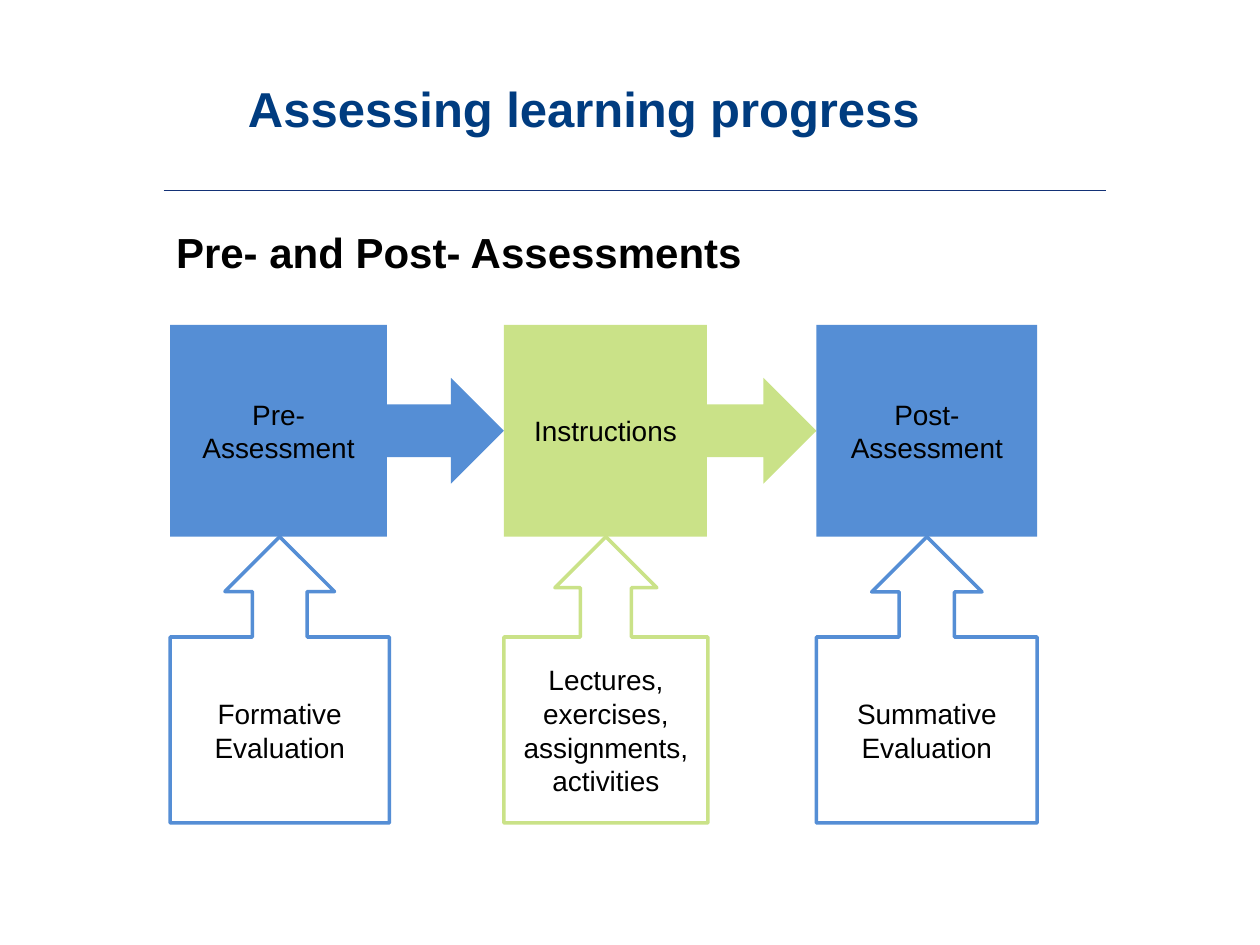
import pptx
import pptx.util
import pptx.dml.color
import pptx.enum.shapes
import pptx.enum.text
import pptx.oxml.ns
from lxml import etree
from pptx.util import Cm

TITLE = "Assessing learning progress"
HEADING = "Pre- and Post- Assessments"
STAGES = [
    dict(step="Pre- Assessment", support="Formative Evaluation", color="blue",
         shape="RIGHT_ARROW_CALLOUT", width=6.73, support_width=4.42),
    dict(step="Instructions", support="Lectures, exercises, assignments, activities", color="green",
         shape="RIGHT_ARROW_CALLOUT", width=6.3, support_width=4.11),
    dict(step="Post- Assessment", support="Summative Evaluation", color="blue",
         shape="RECTANGLE", width=4.45, support_width=4.45),
]
THEME = dict(font="Arial", title="003C80", rule="133176", text="000000", white="FFFFFF",
             blue="558ED5", green="CAE288", title_size=28, heading_size=24, body_size=16)
LEFT, STEP_TOP, STEP_HEIGHT, SUPPORT_HEIGHT = 3.43, 6.55, 4.27, 5.77


def rgb(name):
    return pptx.dml.color.RGBColor.from_string(THEME[name])


def write(s, text, size="body_size", color="text", bold=False, align="LEFT", anchor="MIDDLE"):
    tf = s.text_frame
    tf.word_wrap = True
    tf.vertical_anchor = getattr(pptx.enum.text.MSO_ANCHOR, anchor)
    p = tf.paragraphs[0]
    p.alignment = getattr(pptx.enum.text.PP_ALIGN, align)
    r = p.add_run()
    r.text = text
    r.font.name = THEME["font"]
    r.font.size = pptx.util.Pt(THEME[size])
    r.font.bold = bold
    r.font.color.rgb = rgb(color)


def add_box(sp, kind, box, text, fill, line=None):
    s = sp.add_shape(getattr(pptx.enum.shapes.MSO_SHAPE, kind), *map(Cm, box))
    s.shadow.inherit = False
    s.fill.solid()
    s.fill.fore_color.rgb = rgb(fill)
    if line:
        s.line.color.rgb = rgb(line)
        s.line.width = pptx.util.Pt(2)
    else:
        s.line.fill.background()
    write(s, text, align="CENTER")
    return s


def add_support(sp, x, width, text, color):
    top = STEP_TOP + STEP_HEIGHT
    offset = (SUPPORT_HEIGHT - width) / 2
    box = (x - offset, top + offset, SUPPORT_HEIGHT, width)
    s = add_box(sp, "RIGHT_ARROW_CALLOUT", box, text, "white", color)
    s.rotation = 270
    s.text_frame._txBody.bodyPr.set("vert", "vert")


def main():
    """Build the learning progress slide."""
    prs = pptx.Presentation()
    prs.slide_width, prs.slide_height = Cm(25.4), Cm(19.05)
    sp = prs.slides.add_slide(prs.slide_layouts[6]).shapes

    rule = sp.add_connector(pptx.enum.shapes.MSO_CONNECTOR.STRAIGHT,
                            Cm(3.3), Cm(3.84), Cm(22.3), Cm(3.84))
    rule.line.color.rgb = rgb("rule")
    rule.line.width = pptx.util.Pt(0.75)
    etree.SubElement(rule._element.spPr, pptx.oxml.ns.qn("a:effectLst"))

    write(sp.add_textbox(Cm(4.75), Cm(0.76), Cm(17.55), Cm(2.82)), TITLE,
          size="title_size", color="title", bold=True)
    write(sp.add_textbox(Cm(3.3), Cm(4.45), Cm(19), Cm(12.27)), HEADING,
          size="heading_size", bold=True, anchor="TOP")

    x = LEFT
    for stage in STAGES:
        add_box(sp, stage["shape"], (x, STEP_TOP, stage["width"], STEP_HEIGHT),
                stage["step"], stage["color"])
        add_support(sp, x, stage["support_width"], stage["support"], stage["color"])
        x += stage["width"]

    prs.save("out.pptx")


if __name__ == "__main__":
    main()
